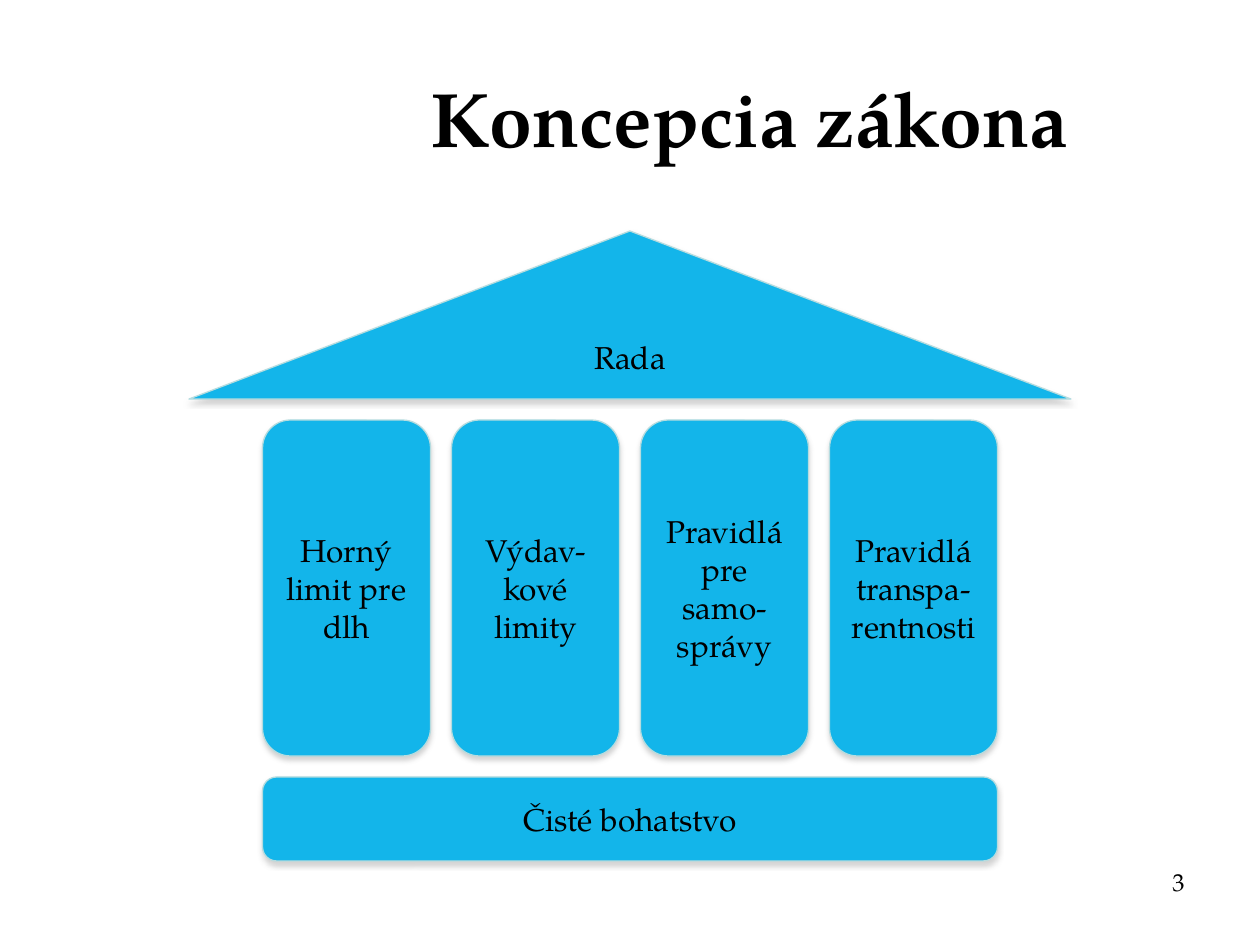
from dataclasses import dataclass

from lxml import etree
from pptx import Presentation
from pptx.dml.color import RGBColor
from pptx.enum.shapes import MSO_SHAPE
from pptx.enum.text import MSO_ANCHOR, PP_ALIGN
from pptx.oxml.ns import qn
from pptx.util import Inches, Pt

ROUNDED, TRIANGLE = MSO_SHAPE.ROUNDED_RECTANGLE, MSO_SHAPE.ISOSCELES_TRIANGLE
TOP, MIDDLE = MSO_ANCHOR.TOP, MSO_ANCHOR.MIDDLE
CENTER, RIGHT = PP_ALIGN.CENTER, PP_ALIGN.RIGHT


@dataclass(frozen=True)
class Theme:
    font: str = "TeX Gyre Pagella"
    text: str = "000000"
    fill: str = "13B5EA"
    line: str = "B6DCDF"
    shadow: str = "808080"
    title_size: int = 44
    body_size: int = 18
    number_size: int = 14


THEME = Theme()

# The slide is a grid of 60 columns by 45 rows
COLS, ROWS = 60, 45
CELL = Inches(10) / COLS
GAP = 1
PILLAR_WIDTH, PILLAR_HEIGHT = 8, 16
ROOF_WIDTH, ROOF_HEIGHT, ROOF_TOP = 42, 8, 11
BASE_HEIGHT = 4
PILLARS = [
    "Horný limit pre dlh",
    "Výdav-kové limity",
    "Pravidlá pre samo-správy",
    "Pravidlá transpa-rentnosti",
]


def grid(*cells):
    return [round(c * CELL) for c in cells]


def set_text(sp, text, size=THEME.body_size, bold=False, align=CENTER, anchor=MIDDLE):
    tf = sp.text_frame
    tf.word_wrap = True
    tf.vertical_anchor = anchor
    p = tf.paragraphs[0]
    p.alignment = align
    r = p.add_run()
    r.text = text
    r.font.name = THEME.font
    r.font.size = Pt(size)
    r.font.bold = bold
    r.font.color.rgb = RGBColor.from_string(THEME.text)


def add_soft_shadow(sp):
    sp.shadow.inherit = False
    effects = sp._element.spPr.find(qn("a:effectLst"))
    shadow = etree.SubElement(effects, qn("a:outerShdw"), blurRad=str(Pt(3.1)),
                              dist=str(Pt(1.8)), dir="5400000", rotWithShape="0")
    color = etree.SubElement(shadow, qn("a:srgbClr"), val=THEME.shadow)
    etree.SubElement(color, qn("a:alpha"), val="35000")


def add_block(s, kind, text, *cells):
    sp = s.shapes.add_shape(kind, *grid(*cells))
    sp.fill.solid()
    sp.fill.fore_color.rgb = RGBColor.from_string(THEME.fill)
    sp.line.color.rgb = RGBColor.from_string(THEME.line)
    sp.line.width = Pt(0.75)
    add_soft_shadow(sp)
    set_text(sp, text)


def add_label(s, text, *cells, **style):
    set_text(s.shapes.add_textbox(*grid(*cells)), text, **style)


def add_temple(s):
    pitch = PILLAR_WIDTH + GAP
    width = len(PILLARS) * pitch - GAP
    left = (COLS - width) / 2
    pillar_top = ROOF_TOP + ROOF_HEIGHT + GAP
    base_top = pillar_top + PILLAR_HEIGHT + GAP

    # Base, pillars and roof
    add_block(s, ROUNDED, "Čisté bohatstvo", left, base_top, width, BASE_HEIGHT)
    for i, text in enumerate(PILLARS):
        add_block(s, ROUNDED, text, left + i * pitch, pillar_top,
                  PILLAR_WIDTH, PILLAR_HEIGHT)
    add_block(s, TRIANGLE, "Rada", (COLS - ROOF_WIDTH) / 2, ROOF_TOP,
              ROOF_WIDTH, ROOF_HEIGHT)


def main():
    prs = Presentation()
    prs.slide_width, prs.slide_height = grid(COLS, ROWS)
    s = prs.slides.add_slide(prs.slide_layouts[6])

    # Title
    add_label(s, "Koncepcia zákona", 14.4, 1.8, 42.6, 7.5,
              size=THEME.title_size, bold=True)
    add_temple(s)
    # Slide number
    add_label(s, "3", 43, 41, 14, 3.1,
              size=THEME.number_size, align=RIGHT, anchor=TOP)

    prs.save("out.pptx")


if __name__ == "__main__":
    main()
